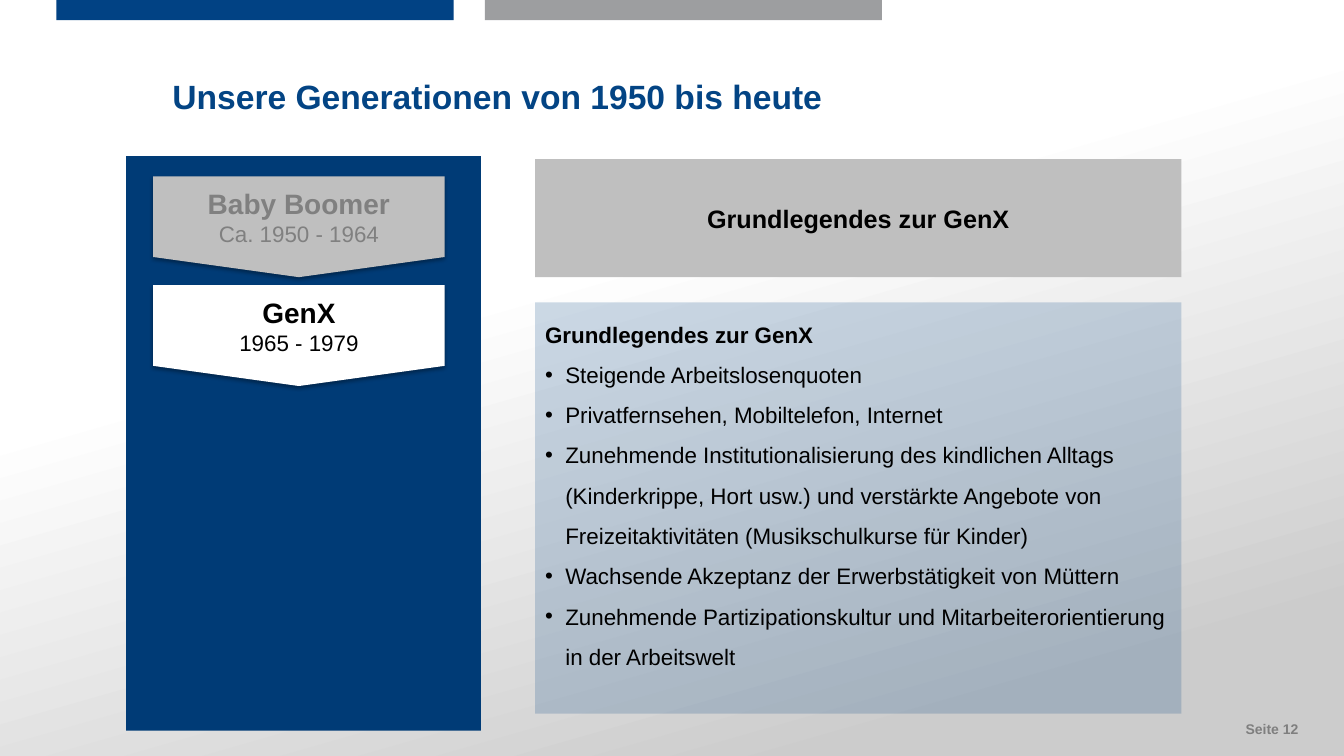
import pptx
import pptx.util
import pptx.dml.color
import pptx.enum.shapes
import pptx.enum.text
import pptx.oxml
import pptx.oxml.ns

CELL = pptx.util.Inches(0.1)  # one column or row of the slide grid
COLS, ROWS = 133.33, 75
FONT = "Arial"
KINDS = pptx.enum.shapes.MSO_SHAPE
ALIGN = pptx.enum.text.PP_ALIGN
ANCHOR = pptx.enum.text.MSO_ANCHOR
COLORS = {
    "navy": "003B76", "blue": "014284", "title": "034484", "steel": "9D9EA0",
    "silver": "BFBFBF", "fade": "CCCCCC", "mute": "808080", "foot": "7F7F7F",
    "white": "FFFFFF", "black": "000000",
}
ERAS = [
    ("Baby Boomer", "Ca. 1950 - 1964", "silver", "mute"),
    ("GenX", "1965 - 1979", "white", "black"),
]
TOPIC = "Grundlegendes zur GenX"
FACTS = [
    "Steigende Arbeitslosenquoten",
    "Privatfernsehen, Mobiltelefon, Internet",
    "Zunehmende Institutionalisierung des kindlichen Alltags (Kinderkrippe, Hort usw.) "
    "und verstärkte Angebote von Freizeitaktivitäten (Musikschulkurse für Kinder)",
    "Wachsende Akzeptanz der Erwerbstätigkeit von Müttern",
    "Zunehmende Partizipationskultur und Mitarbeiterorientierung in der Arbeitswelt",
]


def color(name):
    return pptx.dml.color.RGBColor.from_string(COLORS[name])


def scale(box):
    return [round(side * CELL) for side in box]


def append(parent, xml):
    """Add a DrawingML fragment at the end of parent and return it."""
    space = pptx.oxml.ns.nsdecls("a")
    node = pptx.oxml.parse_xml(xml.replace("/>", f" {space}/>", 1)
                               if xml.index("/>") < xml.index(">")
                               else xml.replace(">", f" {space}>", 1))
    parent.append(node)
    return node


def block(slide, box, fill, kind=KINDS.RECTANGLE, alpha=None):
    shape = slide.shapes.add_shape(kind, *scale(box))
    shape.shadow.inherit = False
    shape.line.fill.background()
    shape.fill.solid()
    shape.fill.fore_color.rgb = color(fill)
    if alpha:
        tone = shape.fill._xPr.find(".//" + pptx.oxml.ns.qn("a:srgbClr"))
        append(tone, f'<a:alpha val="{alpha * 1000}"/>')
    return shape


def shade(shape):
    """Cast a soft shadow straight down."""
    effects = shape._element.spPr.find(pptx.oxml.ns.qn("a:effectLst"))
    append(effects, '<a:outerShdw blurRad="39370" dist="22860" dir="5400000" rotWithShape="0">'
                    f'<a:srgbClr val="{COLORS["black"]}"><a:alpha val="35000"/></a:srgbClr>'
                    '</a:outerShdw>')


def write(frame, text, size=16, tone="black", bold=False, align=ALIGN.LEFT,
          space=None, bullet=False, more=False):
    """Write one paragraph; more adds it after those already there."""
    para = frame.add_paragraph() if more else frame.paragraphs[0]
    para.alignment = align
    if space:
        para.line_spacing = space
    if bullet:
        props = para._p.get_or_add_pPr()
        props.set("marL", str(2 * CELL))
        props.set("indent", str(-2 * CELL))
        append(props, f'<a:buFont typeface="{FONT}"/>')
        append(props, '<a:buChar char="•"/>')
    run = para.add_run()
    run.text = text
    run.font.name = FONT
    run.font.size = pptx.util.Pt(size)
    run.font.bold = bold
    run.font.color.rgb = color(tone)


def setup(frame, anchor):
    frame.word_wrap = True
    frame.auto_size = pptx.enum.text.MSO_AUTO_SIZE.NONE
    frame.vertical_anchor = anchor


def backdrop(slide):
    fill = slide.background.fill
    fill.gradient()
    fill.gradient_angle = 360 - 74
    for stop, (place, tone) in zip(fill.gradient_stops, [(0.38, "white"), (0.87, "fade")]):
        stop.position = place
        stop.color.rgb = color(tone)


def header(slide, box):
    left, top, width, height = box
    for index, tone in enumerate(["blue", "steel"]):
        block(slide, (left + index * 42.5, top, 39.4, 2), tone)
    title = slide.shapes.title
    title.left, title.top, title.width, title.height = scale((left + 10.5, top + 5, 75.8, 8))
    setup(title.text_frame, ANCHOR.TOP)
    write(title.text_frame, "Unsere Generationen von 1950 bis heute", size=24,
          tone="title", bold=True, space=1.5)


def timeline(slide, box):
    left, top, width, height = box
    block(slide, box, "navy")
    for index, (name, years, fill, tone) in enumerate(ERAS):
        place = (left + 2.7, top + 2 + index * 10.8, 28.9, 10)
        shape = block(slide, place, fill, KINDS.FLOWCHART_OFFPAGE_CONNECTOR)
        shade(shape)
        frame = shape.text_frame
        setup(frame, ANCHOR.MIDDLE)
        write(frame, name, size=20, tone=tone, bold=True, align=ALIGN.CENTER)
        write(frame, years, tone=tone, align=ALIGN.CENTER, more=True)


def details(slide, box):
    left, top, width, height = box
    head = block(slide, (left, top, width, 11.7), "silver").text_frame
    setup(head, ANCHOR.MIDDLE)
    write(head, TOPIC, size=18, bold=True, align=ALIGN.CENTER)
    body = block(slide, (left, top + 14.2, width, height - 14.2), "title", alpha=20).text_frame
    setup(body, ANCHOR.TOP)
    write(body, TOPIC, bold=True, space=1.5)
    for fact in FACTS:
        write(body, fact, space=1.5, bullet=True, more=True)


def footer(slide, box):
    frame = slide.shapes.add_textbox(*scale(box)).text_frame
    setup(frame, ANCHOR.TOP)
    frame.margin_left = frame.margin_right = frame.margin_top = frame.margin_bottom = 0
    write(frame, "Seite 12", size=10, tone="foot", bold=True, align=ALIGN.RIGHT)


def main():
    deck = pptx.Presentation()
    deck.slide_width, deck.slide_height = scale((COLS, ROWS))
    slide = deck.slides.add_slide(deck.slide_layouts[5])
    backdrop(slide)
    header(slide, (5.6, 0, 81.9, 13))
    timeline(slide, (12.5, 15.5, 35.2, 57))
    details(slide, (53.1, 15.8, 64.1, 55))
    footer(slide, (114.4, 71.5, 14.4, 2.7))
    deck.save("out.pptx")


if __name__ == "__main__":
    main()
